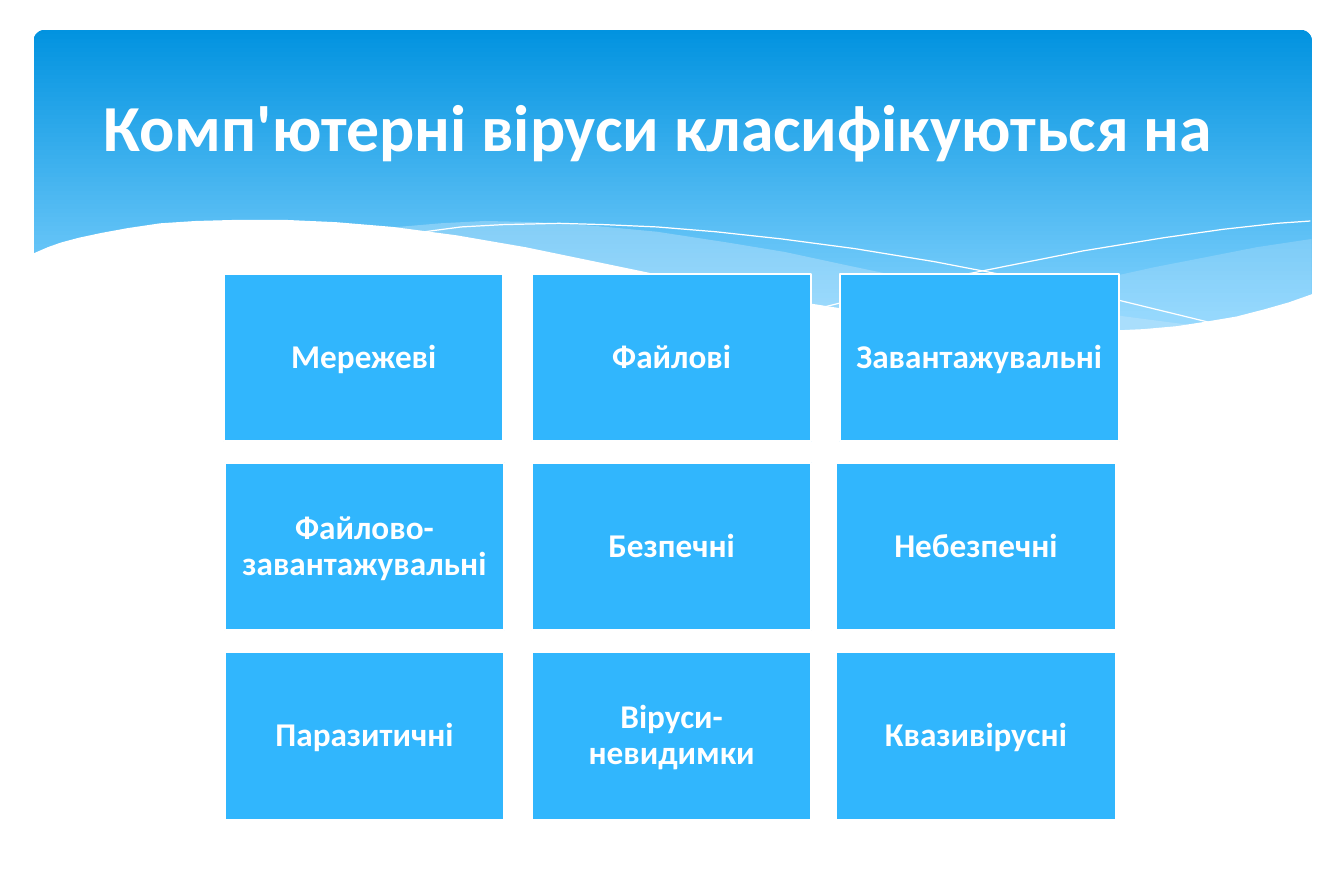
from lxml import etree
from pptx import Presentation
from pptx import util as u
from pptx.dml import color
from pptx.enum import shapes, text
from pptx.oxml import ns

THEME = {
    "sky_top": color.RGBColor.from_string("0293E0"),
    "sky_bottom": color.RGBColor.from_string("83D3FE"),
    "veil": color.RGBColor.from_string("C6E7FC"),
    "box": color.RGBColor.from_string("31B6FD"),
    "white": color.RGBColor.from_string("FFFFFF"),
    "font": "Calibri",
    "title_size": u.Pt(39.6),
    "box_size": u.Pt(20),
}

RIGHT_VEIL = [
    (790.6, 144), (757.4, 149), (721.8, 156), (697, 160.8), (652.3, 170.6),
    (610.6, 178.6), (571.7, 185), (535.7, 190.8), (559.4, 193.7),
    (592.6, 197.3), (623, 199.4), (659.5, 200.2), (691.2, 199.4),
    (720, 195.8), (745.9, 190.8), (769, 185), (790.6, 177.8),
]
WIDE_VEIL = [
    (722.9, 196.6), (678.2, 190.8), (627.8, 182.9), (571.7, 172.8),
    (509.8, 159.8), (473, 151.9), (438.5, 146.2), (396, 139.7),
    (357.8, 136.1), (323.3, 133.9), (292.3, 133.2), (265.7, 134.6),
    (231.8, 137.5), (261.4, 141.1), (293.8, 146.2), (327.6, 151.9),
    (364.3, 159.8), (429.1, 172.8), (473, 181.4), (513.4, 187.9),
    (550.8, 193), (585.4, 196.6), (616.3, 198.7), (645.1, 200.2),
    (670.3, 200.2), (694.8, 199.4),
]
FALLING_LINE = [
    (250.6, 140.4), (277.9, 136.8), (303.1, 135.4), (337, 134.6),
    (364.3, 135.4), (396, 136.8), (431.3, 139.7), (470.9, 144),
    (514.8, 149.8), (563, 157.7), (615.6, 167.8), (673.2, 180.7),
    (735.1, 195.8),
]
RISING_LINE = [
    (496.8, 185), (528.5, 177.1), (563, 169.2), (605.5, 160.6),
    (653, 151.2), (701.3, 143.3), (737.3, 138.2), (769.7, 134.6),
    (789.8, 133.2),
]
WHITE_WAVE = [
    (791.3, 177.1), (776.9, 182.2), (761.8, 186.5), (745.2, 190.8),
    (727.9, 193.7), (709.2, 196.6), (689, 198.4), (666.7, 199.4),
    (643, 198.9), (617, 198), (588.2, 195.8), (558, 193), (524.2, 188.6),
    (488.2, 182.9), (449.3, 176.4), (407.5, 167.8), (362.2, 158.4),
    (316.8, 149), (275, 141.8), (236.9, 136.8), (202.3, 133.9),
    (171.4, 132.5), (143.3, 132.5), (118.1, 133.2), (96.5, 134.6),
    (77, 137.5), (61.2, 140.4), (47.5, 143.3), (36.7, 146.2),
    (28.8, 149), (18.7, 153.4), (18.7, 236.9), (791.3, 236.9),
]


def add_wave(points, closed):
    (left, top), *rest = [(u.Pt(x), u.Pt(y)) for x, y in points]
    builder = page.shapes.build_freeform(left, top)
    builder.add_line_segments(rest, close=closed)
    wave = builder.convert_to_shape()
    wave.shadow.inherit = False
    return wave


def write_text(box, words, size, inset, spacing):
    frame = box.text_frame
    para = frame.paragraphs[0]
    span = para.add_run()
    formats = [
        (frame, {"word_wrap": True, "vertical_anchor": text.MSO_ANCHOR.MIDDLE,
                 "margin_left": inset, "margin_right": inset,
                 "margin_top": inset, "margin_bottom": inset}),
        (para, {"alignment": text.PP_ALIGN.CENTER, "line_spacing": spacing}),
        (span, {"text": words}),
        (span.font, {"name": THEME["font"], "size": size, "bold": True}),
        (span.font.color, {"rgb": THEME["white"]}),
    ]
    for target, values in formats:
        for name, value in values.items():
            setattr(target, name, value)


deck = Presentation()
deck.slide_width, deck.slide_height = u.Pt(810), u.Pt(540)
page = deck.slides.add_slide(deck.slide_layouts[6])

sky = page.shapes.add_shape(shapes.MSO_SHAPE.ROUNDED_RECTANGLE,
                            u.Pt(20.3), u.Pt(18), u.Pt(770.4), u.Pt(194.4))
sky.adjustments[0] = 0.034
sky.shadow.inherit = False
sky.line.fill.background()
sky.fill.gradient()
sky.fill.gradient_angle = 270
for stop, shade, position in zip(sky.fill.gradient_stops, ("sky_top", "sky_bottom"), (0, 0.9)):
    stop.color.rgb = THEME[shade]
    stop.position = position

for points, alpha in ((RIGHT_VEIL, 29), (WIDE_VEIL, 40)):
    veil = add_wave(points, True)
    veil.line.fill.background()
    veil.fill.solid()
    veil.fill.fore_color.rgb = THEME["veil"]
    shade = veil.fill._xPr.find(".//" + ns.qn("a:srgbClr"))
    etree.SubElement(shade, ns.qn("a:alpha"), val=str(alpha * 1000))

for points in (FALLING_LINE, RISING_LINE):
    curve = add_wave(points, False)
    curve.fill.background()
    curve.line.color.rgb = THEME["white"]
    curve.line.width = u.Pt(0)

wave = add_wave(WHITE_WAVE, True)
wave.line.fill.background()
wave.fill.solid()
wave.fill.fore_color.rgb = THEME["white"]

title = page.shapes.add_textbox(u.Pt(42.5), u.Pt(25.9), u.Pt(708.5), u.Pt(98.6))
write_text(title, "Комп'ютерні віруси класифікуються на", THEME["title_size"], u.Pt(5), 1.0)

VIRUS_ROWS = [
    (165, (135, 320.6, 506), ("Мережеві", "Файлові", "Завантажувальні")),
    (278.8, (135.5, 320.6, 504), ("Файлово-завантажувальні", "Безпечні", "Небезпечні")),
    (393, (135.5, 320.6, 504), ("Паразитичні", "Віруси-невидимки", "Квазивірусні")),
]
for top, lefts, names in VIRUS_ROWS:
    for left, name in zip(lefts, names):
        box = page.shapes.add_shape(shapes.MSO_SHAPE.RECTANGLE,
                                    u.Pt(left), u.Pt(top), u.Pt(168.5), u.Pt(101))
        box.shadow.inherit = False
        box.fill.solid()
        box.fill.fore_color.rgb = THEME["box"]
        box.line.color.rgb = THEME["white"]
        box.line.width = u.Pt(1.25)
        write_text(box, name, THEME["box_size"], u.Pt(6), 0.9)

deck.save("out.pptx")
